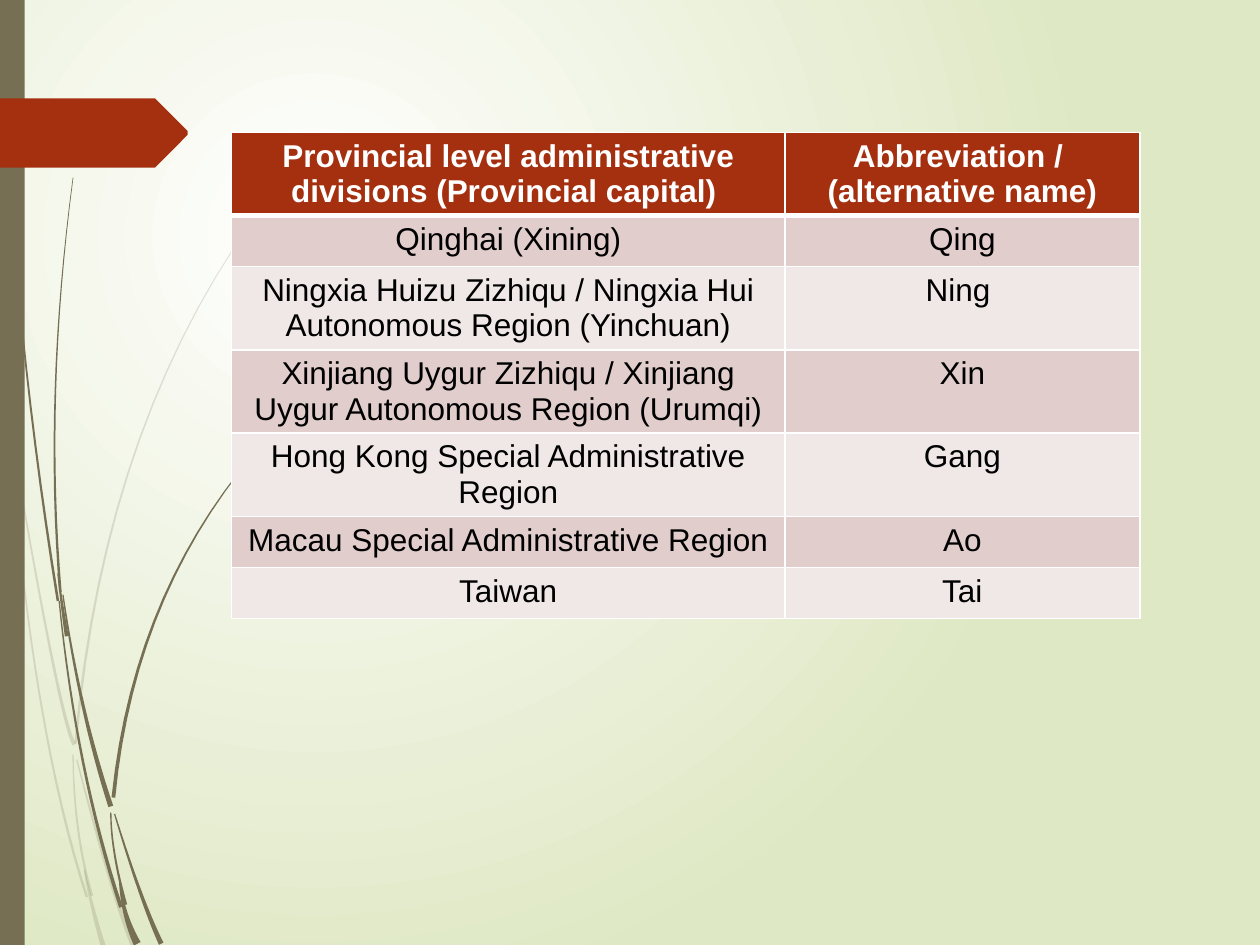
from dataclasses import dataclass
from math import hypot

from lxml.etree import SubElement
from pptx import Presentation
from pptx.dml.color import RGBColor
from pptx.enum.shapes import MSO_SHAPE
from pptx.enum.text import PP_ALIGN
from pptx.oxml import parse_xml
from pptx.oxml.ns import nsdecls, qn
from pptx.util import Cm, Pt


@dataclass(frozen=True)
class Theme:
    olive: str = "766F54"
    red: str = "A53010"
    white: str = "FFFFFF"
    black: str = "000000"
    glow_edge: str = "DFE8C4"
    bands: tuple = ("E1CDCC", "F0E8E7")
    font: str = "Arial"
    text_size: int = 18
    pale_opacity: int = 20


# Grass blades: start, middle, end, (first width, last width) in hundredths of an inch
PALE_BLADES = [
    ((0, 290), (4, 318), (8, 350), (2, 1)),
    ((10, 350), (41, 521), (59, 591), (1, 3)),
    ((61, 603), (86, 693), (106, 751), (1, 4)),
    ((8, 350), (32, 555), (69, 712), (1, 2)),
    ((58, 599), (62, 658), (73, 711), (1, 2)),
    ((217, 153), (111, 348), (60, 590), (0.5, 2)),
    ((67, 690), (73, 718), (82, 751), (1, 4)),
]
DARK_BLADES = [
    ((3, 0), (15, 233), (46, 477), (0.5, 2)),
    ((50, 472), (66, 560), (88, 640), (1, 4)),
    ((91, 646), (111, 707), (128, 749), (1, 4)),
    ((47, 477), (66, 605), (96, 720), (1, 3)),
    ((58, 141), (44, 310), (48, 470), (0.5, 2)),
    ((46, 455), (49, 478), (53, 505), (1, 3)),
    ((216, 344), (130, 475), (90, 633), (0.5, 3)),
    ((88, 645), (91, 678), (100, 718), (1, 2)),
    ((95, 700), (100, 726), (109, 749), (1, 6)),
]
ARROW = [(0, 78), (123, 78), (149, 104), (149, 107), (123, 133), (0, 133)]
ROWS = [
    ("Provincial level administrative divisions (Provincial capital) ",
     "Abbreviation / \n(alternative name)"),
    ("Qinghai (Xining)", "Qing"),
    ("Ningxia Huizu Zizhiqu / Ningxia Hui Autonomous Region (Yinchuan)", "Ning "),
    ("Xinjiang Uygur Zizhiqu / Xinjiang Uygur Autonomous Region (Urumqi)", "Xin"),
    ("Hong Kong Special Administrative Region", "Gang"),
    ("Macau Special Administrative Region", "Ao"),
    ("Taiwan", "Tai"),
]


def blade_outline(start, middle, end, widths, steps=16):
    """Lay a tapered strip along the parabola through three points."""
    bend = [2 * m - (s + e) / 2 for s, m, e in zip(start, middle, end)]
    left, right = [], []
    for step in range(steps + 1):
        t = step / steps
        x, y = ((1 - t) ** 2 * s + 2 * t * (1 - t) * b + t * t * e
                for s, b, e in zip(start, bend, end))
        dx, dy = ((1 - t) * (b - s) + t * (e - b) for s, b, e in zip(start, bend, end))
        half = (widths[0] + t * (widths[1] - widths[0])) / 2 / hypot(dx, dy)
        left.append((x - dy * half, y + dx * half))
        right.append((x + dy * half, y - dx * half))
    return left + right[::-1]


class SlideBuilder:
    def __init__(self, deck, theme):
        self.theme = theme
        self.page = deck.slides.add_slide(deck.slide_layouts[6])

    def background(self):
        fill = self.page.background.fill
        fill.gradient()
        for stop, color in zip(fill.gradient_stops, (self.theme.white, self.theme.glow_edge)):
            stop.color.rgb = RGBColor.from_string(color)
        linear = self.page.element.find(".//" + qn("a:lin"))
        linear.getparent().replace(linear, parse_xml(
            f'<a:path {nsdecls("a")} path="circle">'
            '<a:fillToRect l="50000" t="50000" r="100000" b="100000"/></a:path>'))

    def paint(self, shape, color, opacity=100):
        shape.shadow.inherit = False
        shape.line.fill.background()
        shape.fill.solid()
        shape.fill.fore_color.rgb = RGBColor.from_string(color)
        if opacity < 100:
            tint = shape.element.spPr.find(qn("a:solidFill"))[0]
            SubElement(tint, qn("a:alpha"), val=str(opacity * 1000))

    def bar(self, left, top, width, height, color):
        box = self.page.shapes.add_shape(MSO_SHAPE.RECTANGLE, *map(Cm, (left, top, width, height)))
        self.paint(box, color)

    def outline(self, points, color, opacity=100):
        # Whole local units are kept, so work a hundred times finer
        fine = [(x * 100, y * 100) for x, y in points]
        builder = self.page.shapes.build_freeform(*fine[0], scale=Cm(2.54) / 10000)
        builder.add_line_segments(fine[1:], close=True)
        self.paint(builder.convert_to_shape(), color, opacity)

    def border(self, cell, widths):
        properties = cell._tc.get_or_add_tcPr()
        for index, (side, points) in enumerate(widths.items()):
            properties.insert(index, parse_xml(
                f'<a:ln{side} {nsdecls("a")} w="{Pt(points)}"><a:solidFill>'
                f'<a:srgbClr val="{self.theme.white}"/></a:solidFill></a:ln{side}>'))

    def table(self, rows, left, top, widths, row_height):
        frame = self.page.shapes.add_table(len(rows), len(widths), Cm(left), Cm(top),
                                           Cm(sum(widths)), Cm(row_height * len(rows)))
        for column, width in zip(frame.table.columns, widths):
            column.width = Cm(width)
        for r, texts in enumerate(rows):
            header = r == 0
            fill = self.theme.red if header else self.theme.bands[(r - 1) % 2]
            format_values = {"name": self.theme.font, "size": Pt(self.theme.text_size), "bold": header}
            for c, text in enumerate(texts):
                cell = frame.table.cell(r, c)
                cell.text = text
                cell.fill.solid()
                cell.fill.fore_color.rgb = RGBColor.from_string(fill)
                self.border(cell, {"L": 1, "R": 1, "T": 3 if r == 1 else 1, "B": 3 if header else 1})
                for para in cell.text_frame.paragraphs:
                    para.alignment = PP_ALIGN.CENTER
                    for span in para.runs:
                        for key, value in format_values.items():
                            setattr(span.font, key, value)
                        span.font.color.rgb = RGBColor.from_string(
                            self.theme.white if header else self.theme.black)


def main():
    deck = Presentation()
    deck.slide_width, deck.slide_height = Cm(25.4), Cm(19.05)
    theme = Theme()
    slide = SlideBuilder(deck, theme)
    # Backdrop and grass
    slide.background()
    for blades, opacity in ((PALE_BLADES, theme.pale_opacity), (DARK_BLADES, 100)):
        for blade in blades:
            slide.outline(blade_outline(*blade), theme.olive, opacity)
    # Side bar and arrow tab
    slide.bar(0, 0, 0.5, 19.05, theme.olive)
    slide.outline(ARROW, theme.red)
    # Province table
    slide.table(ROWS, 4.67, 2.67, (11.15, 7.16), 1.03)
    deck.save("out.pptx")


if __name__ == "__main__":
    main()
